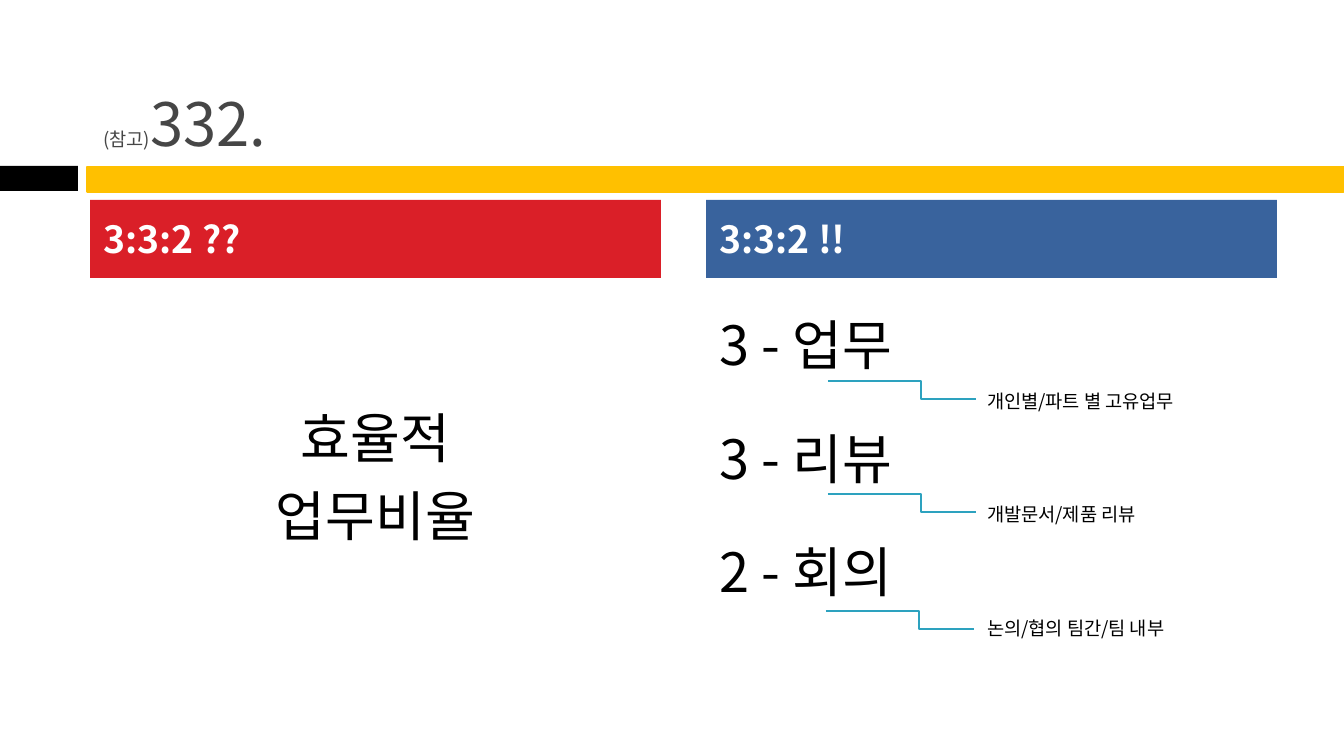
from lxml.etree import SubElement
from pptx import Presentation
from pptx.dml.color import RGBColor
from pptx.enum.shapes import MSO_CONNECTOR as Connector, MSO_SHAPE as Shape
from pptx.enum.text import MSO_ANCHOR as Anchor, PP_ALIGN as Align
from pptx.oxml.ns import qn
from pptx.util import Pt

PX = 914400 / 134.4
FONT = "Noto Sans CJK KR"
COLORS = {
    "yellow": "FFC000", "black": "000000", "red": "DA1F28", "blue": "39639D",
    "title": "464646", "white": "FFFFFF", "teal": "2DA2BF",
}

TITLE = [("(참고)", 10), ("332.", 32)]
HEADERS = [("3:3:2 ??", "red"), ("3:3:2 !!", "blue")]
GOAL = ["효율적", "업무비율"]
RATIOS = [
    ("3 - 업무", "개인별/파트 별 고유업무", (828, 381)),
    ("3 - 리뷰", "개발문서/제품 리뷰", (828, 494)),
    ("2 - 회의", "논의/협의 팀간/팀 내부", (826, 611)),
]
COLUMN_LEFTS = [90, 706]
COLUMN_WIDTH = 571
HEADER_TOP, HEADER_HEIGHT = 200, 78
BODY_TOP, BODY_HEIGHT = 282, 387
DETAIL_INDENT = 268
BRANCH_WIDTH, BRANCH_DROP, BRANCH_BEND = 148, 18, 62900


def px(*lengths):
    return [round(length * PX) for length in lengths]


def rgb(name):
    return RGBColor.from_string(COLORS[name])


def add_bar(slide, box, color):
    bar = slide.shapes.add_shape(Shape.RECTANGLE, *px(*box))
    bar.shadow.inherit = False
    bar.fill.solid()
    bar.fill.fore_color.rgb = rgb(color)
    bar.line.fill.background()
    return bar


def write(holder, paragraphs, color, anchor=Anchor.MIDDLE, align=Align.LEFT,
          bold=False):
    frame = holder.text_frame
    frame.word_wrap = True
    frame.vertical_anchor = anchor
    for index, (runs, indent) in enumerate(paragraphs):
        paragraph = frame.add_paragraph() if index else frame.paragraphs[0]
        paragraph.alignment = align
        if indent:
            paragraph._p.get_or_add_pPr().set("marL", str(*px(indent)))
        if index:
            paragraph.space_before = Pt(7)
        for text, size in runs:
            run = paragraph.add_run()
            run.text = text
            run.font.size = Pt(size)
            run.font.bold = bold
            run.font.color.rgb = rgb(color)
            run.font.name = FONT
            SubElement(run.font._element, qn("a:ea"), typeface=FONT)


def add_branch(slide, left, top):
    branch = slide.shapes.add_connector(
        Connector.ELBOW, *px(left, top, left + BRANCH_WIDTH, top + BRANCH_DROP))
    branch.line.color.rgb = rgb("teal")
    branch.line.width = Pt(0.79)
    properties = branch._element.spPr
    SubElement(properties, qn("a:effectLst"))
    guides = properties.find(qn("a:prstGeom")).find(qn("a:avLst"))
    SubElement(guides, qn("a:gd"), name="adj1", fmla=f"val {BRANCH_BEND}")


def main():
    deck = Presentation()
    deck.slide_width, deck.slide_height = px(1344, 756)
    slide = deck.slides.add_slide(deck.slide_layouts[6])

    stripe = add_bar(slide, (87, 167, 1257, 25), "yellow")
    stripe.line.color.rgb = rgb("yellow")
    stripe.line.width = Pt(1.5)
    add_bar(slide, (0, 166, 78, 25), "black")

    title = slide.shapes.add_textbox(*px(90, 17, 1199, 148))
    write(title, [(TITLE, 0)], "title", Anchor.BOTTOM)

    goal_lines = [([(line, 29)], 0) for line in GOAL]
    ratio_lines = []
    for ratio, detail, _ in RATIOS:
        ratio_lines += [([(ratio, 29)], 0), ([(detail, 10)], DETAIL_INDENT)]

    bodies = [(goal_lines, Align.CENTER), (ratio_lines, Align.LEFT)]
    for left, (header, color), (lines, align) in zip(COLUMN_LEFTS, HEADERS, bodies):
        body = slide.shapes.add_textbox(*px(left, BODY_TOP, COLUMN_WIDTH, BODY_HEIGHT))
        write(body, lines, "black", align=align)
        bar = add_bar(slide, (left, HEADER_TOP, COLUMN_WIDTH, HEADER_HEIGHT), color)
        write(bar, [([(header, 20)], 0)], "white", bold=True)

    for *_, start in RATIOS:
        add_branch(slide, *start)

    deck.save("out.pptx")


if __name__ == "__main__":
    main()
